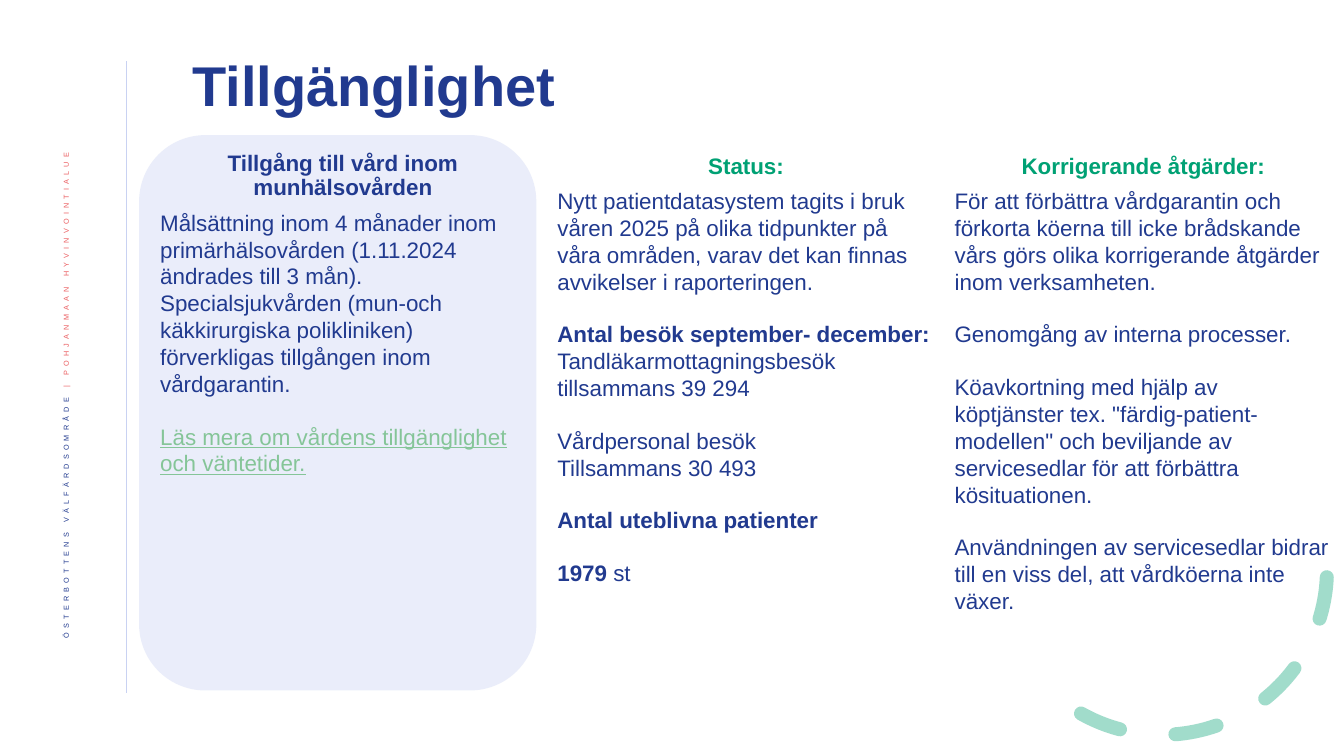
from dataclasses import dataclass
from typing import Optional

from lxml.etree import SubElement
from pptx import Presentation
from pptx.dml.color import RGBColor
from pptx.enum.dml import MSO_LINE
from pptx.enum.shapes import MSO_CONNECTOR, MSO_SHAPE
from pptx.enum.text import MSO_ANCHOR, MSO_AUTO_SIZE, PP_ALIGN
from pptx.oxml.ns import qn
from pptx.util import Inches, Pt


@dataclass(frozen=True)
class Theme:
    font: str = "Arial"
    navy: RGBColor = RGBColor(0x21, 0x3A, 0x8F)
    green: RGBColor = RGBColor(0x00, 0xA1, 0x74)
    pale_green: RGBColor = RGBColor(0x85, 0xC5, 0x98)
    lavender: RGBColor = RGBColor(0xC9, 0xD2, 0xF2)
    coral: RGBColor = RGBColor(0xEB, 0x5C, 0x5F)
    title_size: int = 40
    text_size: int = 16
    side_size: int = 9
    section_gap: float = 18.4  # one line of body text


@dataclass(frozen=True)
class Span:
    text: str
    bold: bool = False


@dataclass(frozen=True)
class Para:
    spans: tuple[Span, ...]
    new_section: bool = False
    link: bool = False


@dataclass(frozen=True)
class Column:
    heading: str
    heading_color: RGBColor
    paras: tuple[Para, ...]
    heading_spacing: Optional[float] = None
    share: float = 1.0  # part of the grid column the text fills


def plain(text: str, new_section: bool = False, link: bool = False) -> Para:
    return Para((Span(text),), new_section, link)


def bold(text: str) -> Para:
    return Para((Span(text, True),), True)


THEME = Theme()

# Grid: three equal columns beside the vertical rule
GRID_LEFT, GRID_TOP, COLUMN_WIDTH = 1.49, 1.46, 3.94

COLUMNS = (
    Column("Tillgång till vård inom munhälsovården", THEME.navy, (
        plain("Målsättning inom 4 månader inom primärhälsovården "
              "(1.11.2024 ändrades till 3 mån)."),
        plain("Specialsjukvården (mun-och käkkirurgiska polikliniken) "
              "förverkligas tillgången inom vårdgarantin."),
        plain("Läs mera om vårdens tillgänglighet och väntetider.", True, link=True),
    ), heading_spacing=0.9, share=0.97),
    Column("Status:", THEME.green, (
        plain("Nytt patientdatasystem tagits i bruk våren 2025 på olika tidpunkter "
              "på våra områden, varav det kan finnas avvikelser i raporteringen."),
        bold("Antal besök september- december:"),
        plain("Tandläkarmottagningsbesök"),
        plain("tillsammans 39 294"),
        plain("Vårdpersonal besök", True),
        plain("Tillsammans 30 493"),
        bold("Antal uteblivna patienter"),
        Para((Span("1979 ", True), Span("st")), True),
    )),
    Column("Korrigerande åtgärder:", THEME.green, (
        plain("För att förbättra vårdgarantin och förkorta köerna till icke brådskande "
              "vårs görs olika korrigerande åtgärder inom verksamheten."),
        plain("Genomgång av interna processer.", True),
        plain('Köavkortning med hjälp av köptjänster tex. "färdig-patient-modellen" och '
              "beviljande av servicesedlar för att förbättra kösituationen.", True),
        plain("Användningen av servicesedlar bidrar till en viss del, "
              "att vårdköerna inte växer.", True),
    )),
)


def set_font(font, size: int, color: RGBColor, is_bold: Optional[bool] = None) -> None:
    font.name, font.size, font.bold = THEME.font, Pt(size), is_bold
    font.color.rgb = color


def set_alpha(shape, percent: int) -> None:
    """Make the shape's only colour partly transparent."""
    color = next(shape._element.spPr.iter(qn("a:srgbClr")))
    SubElement(color, qn("a:alpha")).set("val", str(percent * 1000))


def add_side_rule(page) -> None:
    left = Inches(1.25)
    rule = page.shapes.add_connector(
        MSO_CONNECTOR.STRAIGHT, left, Inches(0.61), left, Inches(6.88))
    rule.line.color.rgb = THEME.lavender
    rule.line.width = Pt(0.5)
    SubElement(rule._element.spPr, qn("a:effectLst"))


def add_side_label(page) -> None:
    box = page.shapes.add_textbox(Inches(0.42), Inches(1.42), Inches(0.52), Inches(5.73))
    frame = box.text_frame
    frame.word_wrap = True
    frame.vertical_anchor = MSO_ANCHOR.MIDDLE
    frame._txBody.bodyPr.set("vert", "vert270")
    para = frame.paragraphs[0]
    para.alignment, para.line_spacing = PP_ALIGN.RIGHT, 0.9
    for text, color in (("ÖSTERBOTTENS VÄLFÄRDSOMRÅDE ", THEME.navy),
                        ("| POHJANMAAN HYVINVOINTIALUE", THEME.coral)):
        run = para.add_run()
        run.text = text
        set_font(run.font, THEME.side_size, color)
        properties = run._r.get_or_add_rPr()
        properties.set("baseline", "30000")
        properties.set("spc", "300")


def add_dashed_arc(page) -> None:
    arc = page.shapes.add_shape(
        MSO_SHAPE.ARC, Inches(9.89), Inches(4.02), Inches(3.27), Inches(3.27))
    arc.adjustments[0], arc.adjustments[1] = 158.17, 17.81
    arc.rotation = 98.9
    arc.shadow.inherit = False
    arc.fill.background()
    arc.line.color.rgb = THEME.green
    arc.line.width = Pt(10)
    arc.line.dash_style = MSO_LINE.DASH
    arc.line._ln.set("cap", "rnd")
    set_alpha(arc, 36)


def add_title(page, text: str) -> None:
    title = page.shapes.title
    title.left, title.top = Inches(1.81), Inches(0.45)
    title.width, title.height = Inches(10.2), Inches(0.85)
    frame = title.text_frame
    frame.text = text
    frame.auto_size = MSO_AUTO_SIZE.NONE
    frame.vertical_anchor = MSO_ANCHOR.MIDDLE
    para = frame.paragraphs[0]
    para.alignment, para.line_spacing = PP_ALIGN.LEFT, 0.9
    set_font(para.font, THEME.title_size, THEME.navy, True)


def add_card(page) -> None:
    card = page.shapes.add_shape(
        MSO_SHAPE.ROUNDED_RECTANGLE, Inches(1.38), Inches(1.34),
        Inches(COLUMN_WIDTH), Inches(5.51))
    card.shadow.inherit = False
    card.fill.solid()
    card.fill.fore_color.rgb = THEME.lavender
    card.line.fill.background()
    set_alpha(card, 38)


def add_column(page, index: int, column: Column) -> None:
    box = page.shapes.add_textbox(
        Inches(GRID_LEFT + index * COLUMN_WIDTH), Inches(GRID_TOP),
        Inches(COLUMN_WIDTH * column.share), Inches(4.76))
    frame = box.text_frame
    frame.word_wrap = True
    frame.auto_size = MSO_AUTO_SIZE.SHAPE_TO_FIT_TEXT
    heading = frame.paragraphs[0]
    heading.text = column.heading
    heading.alignment, heading.space_after = PP_ALIGN.CENTER, Pt(6)
    heading.line_spacing = column.heading_spacing
    set_font(heading.font, THEME.text_size, column.heading_color, True)
    for item in column.paras:
        para = frame.add_paragraph()
        if item.new_section:
            para.space_before = Pt(THEME.section_gap)
        set_font(para.font, THEME.text_size, THEME.pale_green if item.link else THEME.navy)
        para.font.underline = item.link or None
        for span in item.spans:
            run = para.add_run()
            run.text = span.text
            run.font.bold = span.bold or None


def main() -> None:
    deck = Presentation()
    deck.slide_width, deck.slide_height = Inches(13.33), Inches(7.5)
    page = deck.slides.add_slide(deck.slide_layouts[5])

    # Frame decoration
    add_side_rule(page)
    add_side_label(page)
    add_dashed_arc(page)

    # Title and columns
    add_title(page, "Tillgänglighet")
    add_card(page)
    for index, column in enumerate(COLUMNS):
        add_column(page, index, column)
    deck.save("out.pptx")


if __name__ == "__main__":
    main()
